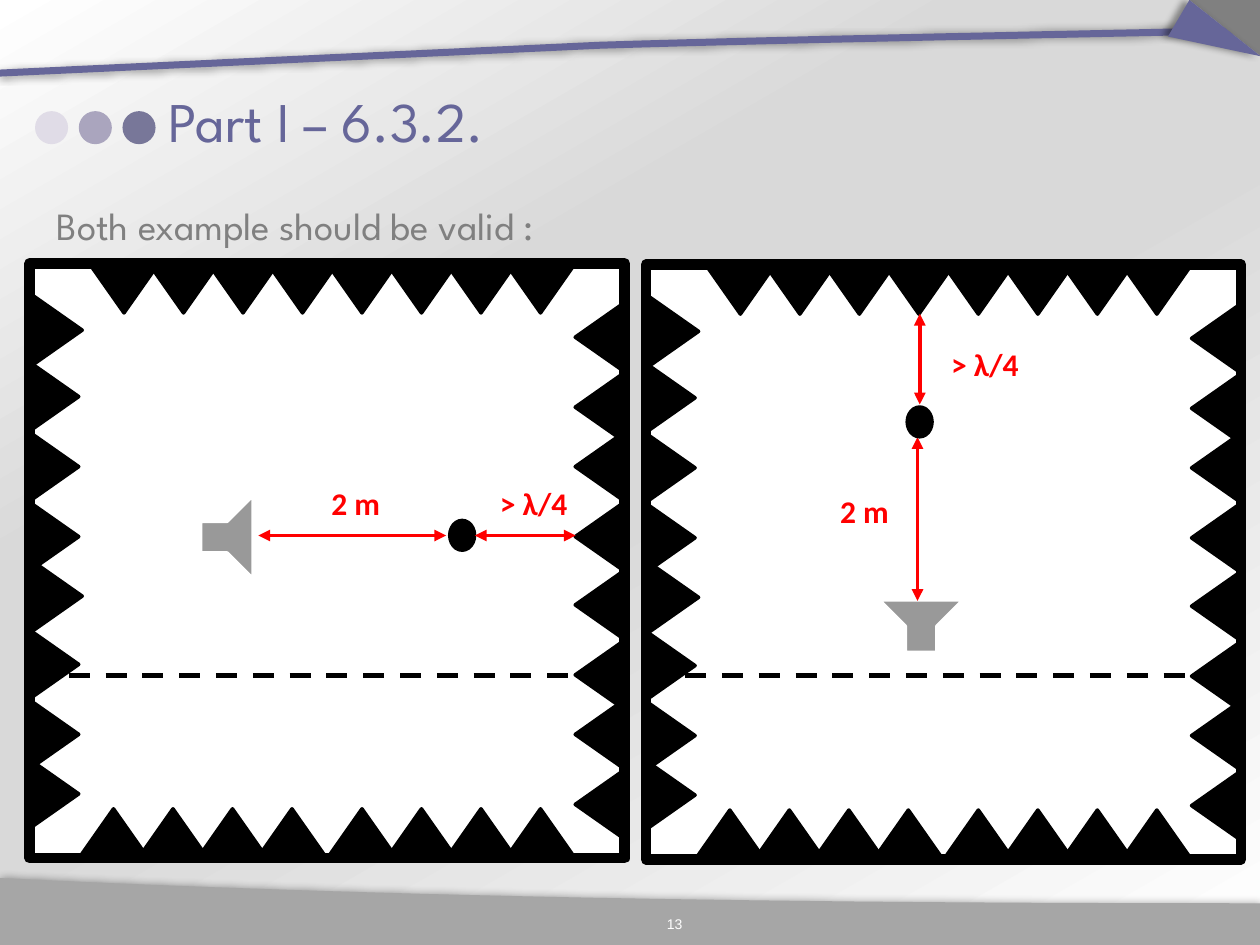
from copy import deepcopy
from lxml import etree
from pptx import Presentation
from pptx import util as u
from pptx.dml.color import RGBColor
from pptx.enum import dml, shapes, text
from pptx.oxml.ns import qn

HUES = {
    "white": "FFFFFF", "black": "000000", "red": "FF0000", "violet": "666699",
    "gray": "808080", "foot": "A6A6A6", "mist": "D9D9D9",
    "dark": "787799", "mid": "AAA5BE", "pale": "E0DCE7",
}
FORM = shapes.MSO_SHAPE
SIDE = 340              # room width and height
WEDGE = (39.7, 28.3)    # base and height of one absorber wedge
STEP = 34


def color(name):
    return RGBColor.from_string(HUES[name])


def curve(a, b, c, d, parts=24):
    """Points of a cubic Bezier curve, both ends included."""
    pts = []
    for i in range(parts + 1):
        t = i / parts
        s = 1 - t
        pts.append(tuple(s**3 * p + 3 * s * s * t * q + 3 * s * t * t * r + t**3 * e
                         for p, q, r, e in zip(a, b, c, d)))
    return pts


class Deck:
    def __init__(self):
        self.prs = Presentation()
        self.prs.slide_width, self.prs.slide_height = u.Pt(720), u.Pt(540)
        self.slide = self.prs.slides.add_slide(self.prs.slide_layouts[1])
        self.items = self.slide.shapes

    def back(self, stops, angle):
        fill = self.slide.background.fill
        fill.gradient()
        fill.gradient_angle = angle
        grad = self.slide._element.find(".//" + qn("a:gsLst"))
        first = deepcopy(grad[0])
        for old in list(grad):
            grad.remove(old)
        for _ in stops:
            grad.append(deepcopy(first))
        for stop, (pos, name) in zip(fill.gradient_stops, stops):
            stop.position = pos
            stop.color.rgb = color(name)

    def paint(self, item, fill=None, line=None, width=2):
        item.shadow.inherit = False
        if fill:
            item.fill.solid()
            item.fill.fore_color.rgb = color(fill)
        else:
            item.fill.background()
        if line:
            item.line.color.rgb = color(line)
            item.line.width = u.Pt(width)
        else:
            item.line.fill.background()
        return item

    def shape(self, form, box, fill, line=None, width=2, turn=0):
        item = self.items.add_shape(form, *map(u.Pt, box))
        item.rotation = turn
        return self.paint(item, fill, line, width)

    def outline(self, pts, fill=None, line=None, width=2, shade=None):
        """Freeform through pts; shade is (blur, distance, degrees)."""
        pts = [(u.Pt(x), u.Pt(y)) for x, y in pts]
        pen = self.items.build_freeform(*pts[0], scale=1.0)
        pen.add_line_segments(pts[1:], close=bool(fill))
        item = self.paint(pen.convert_to_shape(), fill, line, width)
        if shade:
            blur, dist, deg = shade
            effect = item._element.spPr.find(qn("a:effectLst"))
            cast = etree.SubElement(effect, qn("a:outerShdw"), blurRad=str(u.Pt(blur)),
                                    dist=str(u.Pt(dist)), dir=str(deg * 60000),
                                    rotWithShape="0")
            tint = etree.SubElement(cast, qn("a:srgbClr"), val=HUES["black"])
            etree.SubElement(tint, qn("a:alpha"), val="40000")

    def line(self, start, end, name, width, dash=False, heads=False):
        item = self.items.add_connector(shapes.MSO_CONNECTOR.STRAIGHT,
                                        *map(u.Pt, (*start, *end)))
        item.line.color.rgb = color(name)
        item.line.width = u.Pt(width)
        if dash:
            item.line.dash_style = dml.MSO_LINE.DASH
        props = item._element.spPr
        if heads:
            for tag in ("a:headEnd", "a:tailEnd"):
                etree.SubElement(props.find(qn("a:ln")), qn(tag), type="triangle")
        etree.SubElement(props, qn("a:effectLst"))

    def word(self, item, words, font, size, name, align, bold=False):
        item.text_frame.text = words
        para = item.text_frame.paragraphs[0]
        para.alignment = align
        para.font.name, para.font.size, para.font.bold = font, u.Pt(size), bold
        para.font.color.rgb = color(name)
        return para

    def holder(self, index, box, words, size, name):
        item = self.slide.placeholders[index]
        item.left, item.top, item.width, item.height = map(u.Pt, box)
        return self.word(item, words, "League Spartan", size, name, text.PP_ALIGN.LEFT)

    def label(self, box, words):
        item = self.items.add_textbox(*map(u.Pt, box))
        item.text_frame.word_wrap = False
        item.text_frame.auto_size = text.MSO_AUTO_SIZE.SHAPE_TO_FIT_TEXT
        self.word(item, words, "Calibri", 18, "red", text.PP_ALIGN.LEFT, True)

    def number(self, box, words):
        item = self.items.add_textbox(*map(u.Pt, box))
        item.text_frame.word_wrap = True
        item.text_frame.vertical_anchor = text.MSO_ANCHOR.MIDDLE
        self.word(item, words, "Arial", 8, "white", text.PP_ALIGN.CENTER)

    def room(self, x, y):
        """Square chamber with eight absorber wedges on each wall."""
        self.shape(FORM.RECTANGLE, (x, y, SIDE, SIDE), "white", "black", 6)
        left = (24, 62, 102, 142, 176, 215, 255, 289)
        right = (28, 68, 102, 142, 181, 221, 255, 295)
        spots = [(STEP * (i + 1), 0, 180) for i in range(8)]
        spots += [(-4 if i in (0, 4) else -6, dy, 90) for i, dy in enumerate(left)]
        spots += [(28 + STEP * i + (6 if i > 3 else 0), SIDE - WEDGE[1], 0)
                  for i in range(8)]
        spots += [(306, dy, 270) for dy in right]
        for dx, dy, turn in spots:
            self.shape(FORM.ISOSCELES_TRIANGLE, (x + dx, y + dy, *WEDGE),
                       "black", "black", 2, turn)

    def floor(self, x):
        self.line((x + 22.3, 386), (x + 320, 386), "black", 3, dash=True)

    def source(self, x, y, turn=0):
        self.shape(FORM.ACTION_BUTTON_SOUND, (x, y, 113.4, 64), "white", "white", 2, turn)

    def mic(self, x, y):
        self.shape(FORM.OVAL, (x, y, 14.2, 17), "black", "black")

    def arrow(self, start, end):
        self.line(start, end, "red", 2.25, heads=True)


def frame(deck):
    """Background, ribbon, corner fold, footer band and title dots."""
    deck.back([(0, "white"), (0.48, "mist"), (0.66, "mist"), (1, "white")], 120)
    ribbon = curve((342.7, 25.9), (462, 22.3), (590, 20.2), (718, 17.3))
    deck.outline([(0, 41.8)] + ribbon, line="violet", width=4, shade=(5, 0, 0))
    band = curve((0, 501.8), (250, 514), (492, 516.2), (720.5, 516.2))
    deck.outline(band + [(720.5, 540), (0, 540)], "foot", shade=(5, 0, 0))
    deck.outline([(720.5, 0), (720.5, 32.2), (679.7, 0)], "gray")
    deck.outline([(679.7, 0), (720.5, 32.2), (667.4, 20.9)], "violet", shade=(4, 3, 180))
    for i, name in enumerate(("pale", "mid", "dark")):
        deck.shape(FORM.OVAL, (20 + 25 * i, 63.5, 18.9, 18.9), name)


def main():
    deck = Deck()
    frame(deck)
    deck.holder(0, (89.3, 43.2, 604.8, 51.1), "Part I – 6.3.2.", 32, "violet")
    deck.slide.shapes.title.text_frame.vertical_anchor = text.MSO_ANCHOR.MIDDLE
    para = deck.holder(1, (25.2, 111.6, 668.9, 357.1),
                       "Both example should be valid :", 22, "gray")
    props = para._p.get_or_add_pPr()
    props.set("marL", "0")
    props.set("indent", "0")
    props.insert_element_before(etree.Element(qn("a:buNone")), "a:tabLst", "a:defRPr")
    deck.number((368.6, 513.4, 33.8, 28.8), "13")

    near, far = 17, 369.2
    deck.room(near, 150.5)
    deck.floor(near)
    deck.source(82, 275)
    deck.arrow((147.6, 306), (255, 306))
    deck.mic(257, 297.4)
    deck.label((182.2, 272.9, 46.8, 28.8), "2 m")
    deck.arrow((329, 306), (271.4, 306))
    deck.label((278.6, 272.9, 57.6, 28.8), "> λ/4")

    deck.room(far, 151.2)
    deck.source(469.7, 316.8, 270)
    deck.arrow((524.3, 343.4), (524.3, 249.8))
    deck.mic(518.4, 232.6)
    deck.label((473, 277.9, 46.8, 28.8), "2 m")
    deck.arrow((525.6, 179.3), (525.6, 231.1))
    deck.label((536.4, 193.7, 57.6, 28.8), "> λ/4")
    deck.floor(far)

    deck.prs.save("out.pptx")


if __name__ == "__main__":
    main()
